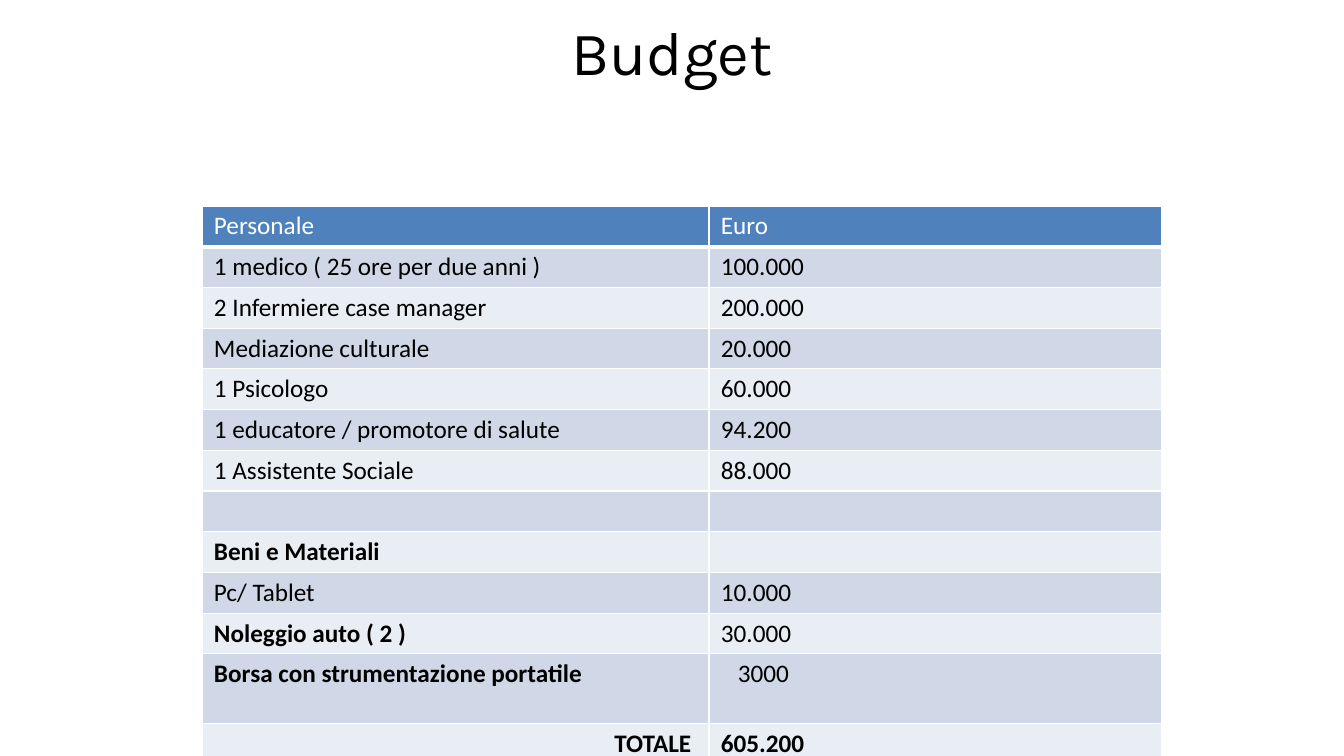
from dataclasses import dataclass
from lxml.etree import SubElement
from pptx import Presentation
from pptx.dml.color import RGBColor as RGB
from pptx.enum.text import MSO_ANCHOR as Anchor, MSO_AUTO_SIZE as Fit, PP_ALIGN as Align
from pptx.oxml.ns import qn
from pptx.util import Emu, Pt


@dataclass(frozen=True)
class Theme:
    head: str = "4F81BD"
    bands: tuple = ("E9EDF4", "D0D8E8")
    ink: str = "000000"
    white: str = "FFFFFF"
    title: str = "Karla"
    body: str = "Calibri"
    big: int = 44
    small: int = 18
    thin: int = 1
    thick: int = 3


THEME = Theme()
SLIDE = (1344, 756)
TITLE = "Budget"
TITLE_BOX = (67, 7, 1210, 87)
ORIGIN = (202, 206)
COLS = (507, 453)
ROW, TALL = 40, 70
PAD_X, PAD_Y = 12, 5
INDENT = 17
ROWS = [
    ("Personale", "Euro"),
    ("1 medico ( 25 ore per due anni )", "100.000"),
    ("2 Infermiere case manager", "200.000"),
    ("Mediazione culturale", "20.000"),
    ("1 Psicologo", "60.000"),
    ("1 educatore / promotore di salute", "94.200"),
    ("1 Assistente Sociale", "88.000"),
    ("", ""),
    ("Beni e Materiali", ""),
    ("Pc/ Tablet", "10.000"),
    ("Noleggio auto ( 2 )", "30.000"),
    ("Borsa con strumentazione portatile", "3000"),
    ("TOTALE ", "605.200"),
]
BOLD = {"Beni e Materiali", "Noleggio auto ( 2 )",
        "Borsa con strumentazione portatile", "TOTALE ", "605.200"}
KIT, TOTAL = 11, 12


def px(n):
    return Emu(round(n * 12192000 / SLIDE[0]))


def style(font, name, size, color, bold=False):
    font.name, font.size, font.bold = name, Pt(size), bold
    font.color.rgb = RGB.from_string(color)


def edge(cell, widths):
    props = cell._tc.get_or_add_tcPr()
    for i, (side, width) in enumerate(zip("LRTB", widths)):
        line = props.makeelement(qn(f"a:ln{side}"), {"w": str(Pt(width))})
        fill = SubElement(line, qn("a:solidFill"))
        SubElement(fill, qn("a:srgbClr"), val=THEME.white)
        props.insert(i, line)


def add_title(slide):
    box = slide.shapes.title
    box.left, box.top, box.width, box.height = map(px, TITLE_BOX)
    frame = box.text_frame
    frame.text = TITLE
    frame.auto_size = Fit.NONE
    frame.vertical_anchor = Anchor.MIDDLE
    frame.margin_left = frame.margin_right = 0
    frame.margin_top = frame.margin_bottom = 0
    para = frame.paragraphs[0]
    para.alignment = Align.CENTER
    style(para.runs[0].font, THEME.title, THEME.big, THEME.ink)


def fill_cell(cell, text, row, col):
    first = row == 0
    cell.margin_left = cell.margin_right = px(PAD_X)
    cell.margin_top = cell.margin_bottom = px(PAD_Y)
    cell.fill.solid()
    shade = THEME.head if first else THEME.bands[row % 2]
    cell.fill.fore_color.rgb = RGB.from_string(shade)
    edge(cell, (THEME.thin,) * 3 + (THEME.thick if first else THEME.thin,))
    cell.text_frame.text = text
    para = cell.text_frame.paragraphs[0]
    if (row, col) == (TOTAL, 0):
        para.alignment = Align.RIGHT
    if (row, col) == (KIT, 1):
        para._p.get_or_add_pPr().set("marL", str(px(INDENT)))
    ink = THEME.white if first else THEME.ink
    for run in para.runs:
        style(run.font, THEME.body, THEME.small, ink, text in BOLD)


def add_budget(slide):
    tall = [TALL if i == KIT else ROW for i in range(len(ROWS))]
    size = (*ORIGIN, sum(COLS), sum(tall))
    table = slide.shapes.add_table(len(ROWS), len(COLS), *map(px, size)).table
    table.first_row = table.horz_banding = False
    for col, width in zip(table.columns, COLS):
        col.width = px(width)
    for r, texts in enumerate(ROWS):
        table.rows[r].height = px(tall[r])
        for c, text in enumerate(texts):
            fill_cell(table.cell(r, c), text, r, c)


def main():
    deck = Presentation()
    deck.slide_width, deck.slide_height = map(px, SLIDE)
    slide = deck.slides.add_slide(deck.slide_layouts[5])
    add_title(slide)
    add_budget(slide)
    deck.save("out.pptx")


if __name__ == "__main__":
    main()
